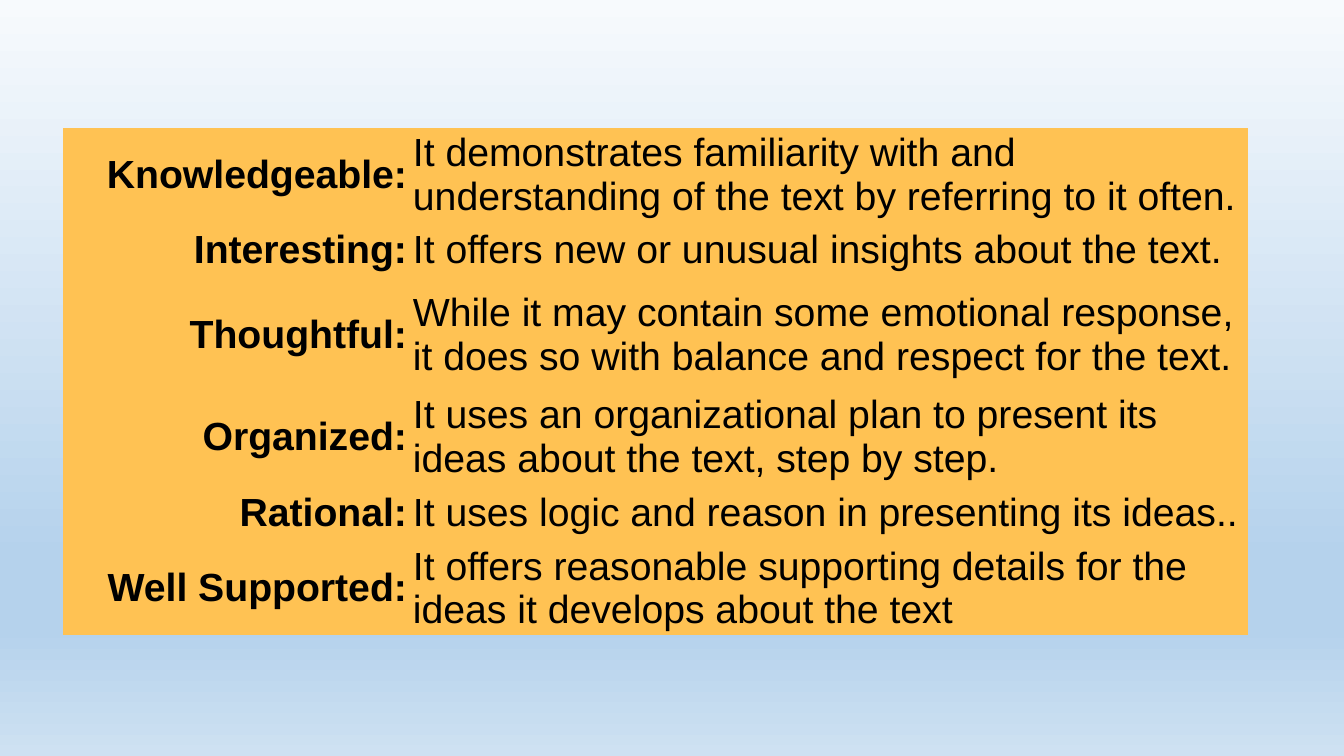
from copy import deepcopy
from dataclasses import dataclass

from pptx import Presentation
from pptx.dml.color import RGBColor as RGB
from pptx.enum.text import MSO_ANCHOR as Anchor, PP_ALIGN as Align
from pptx.oxml.ns import qn
from pptx.util import Pt


@dataclass(frozen=True)
class Theme:
    font: str = "Arial"
    size: int = 28
    ink: str = "000000"
    gold: str = "FFC253"
    sky: tuple = ((0, "F7FAFD"), (74, "B5D2EC"), (83, "B5D2EC"), (100, "CEE1F2"))
    grid: str = "{2D5ABB26-0587-4C30-8999-92F81FD0307C}"


def px(n):
    return round(n * 914400 / 100.8)


theme = Theme()
traits = [
    (85, "Knowledgeable:", "It demonstrates familiarity with and understanding of the text by referring to it often."),
    (58, "Interesting:", "It offers new or unusual insights about the text."),
    (111, "Thoughtful:", "While it may contain some emotional response, it does so with balance and respect for the text."),
    (85, "Organized:", "It uses an organizational plan to present its ideas about the text, step by step."),
    (58, "Rational:", "It uses logic and reason in presenting its ideas.."),
    (85, "Well Supported:", "It offers reasonable supporting details for the ideas it develops about the text"),
]
widths = [347, 838]
pad = px(3)

deck = Presentation()
deck.slide_width, deck.slide_height = px(1344), px(756)
slide = deck.slides.add_slide(deck.slide_layouts[6])

back = slide.background.fill
back.gradient()
back.gradient_angle = 270
stops = slide.element.find(".//" + qn("a:gsLst"))
while len(stops) < len(theme.sky):
    stops.append(deepcopy(stops[0]))
for stop, (spot, tint) in zip(back.gradient_stops, theme.sky):
    stop.position = spot / 100
    stop.color.rgb = RGB.from_string(tint)

high = sum(row[0] for row in traits)
frame = slide.shapes.add_table(len(traits), 2, px(63), px(128), px(sum(widths)), px(high))
table = frame.table
table.first_row = table.horz_banding = False
table._tbl.tblPr.find(qn("a:tableStyleId")).text = theme.grid
for col, wide in zip(table.columns, widths):
    col.width = px(wide)

for row, (tall, *texts) in zip(table.rows, traits):
    row.height = px(tall)
    for cell, text, bold, align in zip(row.cells, texts, (True, False), (Align.RIGHT, Align.LEFT)):
        cell.text = text
        cell.fill.solid()
        cell.fill.fore_color.rgb = RGB.from_string(theme.gold)
        cell.vertical_anchor = Anchor.MIDDLE
        cell.margin_left = cell.margin_right = cell.margin_top = cell.margin_bottom = pad
        para = cell.text_frame.paragraphs[0]
        para.alignment = align
        font = para.font
        font.name, font.size, font.bold = theme.font, Pt(theme.size), bold
        font.color.rgb = RGB.from_string(theme.ink)

deck.save("out.pptx")
